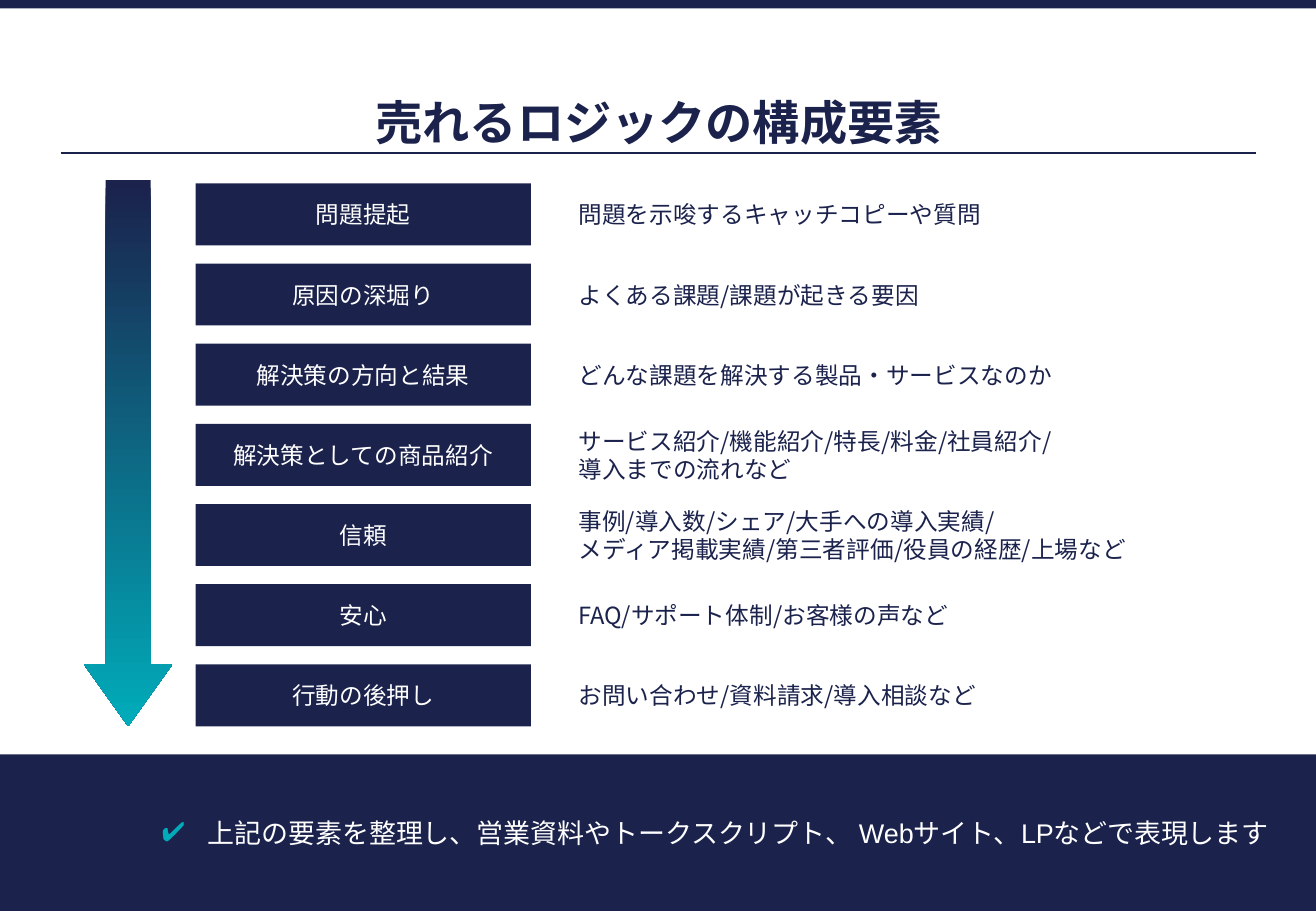
from lxml import etree
from pptx import Presentation
from pptx.dml.color import RGBColor
from pptx.enum.shapes import MSO_CONNECTOR, MSO_SHAPE
from pptx.enum.text import MSO_ANCHOR, MSO_AUTO_SIZE, PP_ALIGN
from pptx.oxml.ns import qn
from pptx.util import Inches, Pt

# Content
TITLE = "売れるロジックの構成要素"
STEPS = [
    ("問題提起", "問題を示唆するキャッチコピーや質問"),
    ("原因の深堀り", "よくある課題/課題が起きる要因"),
    ("解決策の方向と結果", "どんな課題を解決する製品・サービスなのか"),
    ("解決策としての商品紹介",
     "サービス紹介/機能紹介/特長/料金/社員紹介/\n導入までの流れなど"),
    ("信頼",
     "事例/導入数/シェア/大手への導入実績/\nメディア掲載実績/第三者評価/役員の経歴/上場など"),
    ("安心", "FAQ/サポート体制/お客様の声など"),
    ("行動の後押し", "お問い合わせ/資料請求/導入相談など"),
]
SUMMARY = "上記の要素を整理し、営業資料やトークスクリプト、 Webサイト、LPなどで表現します"

# Format
COLORS = {"navy": "1B224C", "teal": "00ACBA", "white": "FFFFFF"}
CJK = "Noto Sans CJK JP"
TITLE_FONT = {"size": Pt(28), "name": "Arial", "bold": True}
STEP_FONT = {"size": Pt(14), "name": CJK}
SUMMARY_FONT = {"size": Pt(16), "name": "Arial"}

# Layout in inches
WIDTH, HEIGHT = 10.83, 7.5
MARGIN, CONTENT_W = 0.5, 9.84
STEP_TOP, STEP_PITCH, STEP_H = 1.51, 0.66, 0.51
STEP_LEFT, STEP_W = 1.61, 2.76
DETAIL_LEFT, DETAIL_W, DETAIL_LINE_H = 4.76, 5.38, 0.24
SUMMARY_TOP = 6.21


def rgb(color):
    return RGBColor.from_string(COLORS[color])


def box(left, top, width, height):
    return [Inches(value) for value in (left, top, width, height)]


def write(shape, text, font, color, align, insets=(0, 0, 0, 0)):
    frame = shape.text_frame
    values = {"word_wrap": True, "auto_size": MSO_AUTO_SIZE.NONE,
              "vertical_anchor": MSO_ANCHOR.MIDDLE}
    sides = ("margin_left", "margin_top", "margin_right", "margin_bottom")
    values.update(zip(sides, map(Inches, insets)))
    for key, value in values.items():
        setattr(frame, key, value)
    paragraph = frame.paragraphs[0]
    paragraph.text = text
    paragraph.alignment = align
    for run in paragraph.runs:
        for key, value in font.items():
            setattr(run.font, key, value)
        run.font.color.rgb = rgb(color)
        east_asian = etree.SubElement(run.font._element, qn("a:ea"))
        east_asian.set("typeface", CJK)
    return paragraph


def add_block(slide, left, top, width, height, kind=MSO_SHAPE.RECTANGLE):
    block = slide.shapes.add_shape(kind, *box(left, top, width, height))
    block.shadow.inherit = False
    block.fill.solid()
    block.fill.fore_color.rgb = rgb("navy")
    block.line.fill.background()
    return block


def add_check_bullet(paragraph):
    properties = paragraph._p.get_or_add_pPr()
    properties.set("marL", str(Inches(0.38)))
    properties.set("indent", str(-Inches(0.38)))
    bullet_color = etree.SubElement(properties, qn("a:buClr"))
    etree.SubElement(bullet_color, qn("a:srgbClr")).set("val", COLORS["teal"])
    etree.SubElement(properties, qn("a:buFont")).set("typeface", "Arial")
    etree.SubElement(properties, qn("a:buChar")).set("char", "✔")


def main():
    deck = Presentation()
    deck.slide_width, deck.slide_height = Inches(WIDTH), Inches(HEIGHT)
    slide = deck.slides.add_slide(deck.slide_layouts[5])

    # Top band, title and rule
    add_block(slide, 0, 0, WIDTH, 0.07)
    title = slide.shapes.title
    title.left, title.top, title.width, title.height = box(
        MARGIN, 0.52, CONTENT_W, 0.73)
    heading = write(title, TITLE, TITLE_FONT, "navy", PP_ALIGN.CENTER)
    heading.line_spacing = 1.5
    rule = slide.shapes.add_connector(
        MSO_CONNECTOR.STRAIGHT, Inches(MARGIN), Inches(1.26),
        Inches(MARGIN + CONTENT_W), Inches(1.26))
    rule.line.color.rgb = rgb("navy")
    rule.line.width = Pt(1)
    etree.SubElement(rule._element.spPr, qn("a:effectLst"))

    # Summary band
    summary = add_block(slide, 0, SUMMARY_TOP, WIDTH, HEIGHT - SUMMARY_TOP)
    add_check_bullet(write(summary, SUMMARY, SUMMARY_FONT, "white",
                           PP_ALIGN.LEFT, (1.33, 0, 0.31, 0)))

    # Steps with their details
    for index, (step, detail) in enumerate(STEPS):
        top = STEP_TOP + index * STEP_PITCH
        label = add_block(slide, STEP_LEFT, top, STEP_W, STEP_H)
        write(label, step, STEP_FONT, "white", PP_ALIGN.CENTER, (0.08,) * 4)
        detail_h = DETAIL_LINE_H * len(detail.splitlines())
        description = slide.shapes.add_textbox(*box(
            DETAIL_LEFT, top + (STEP_H - detail_h) / 2, DETAIL_W, detail_h))
        write(description, detail, STEP_FONT, "navy", PP_ALIGN.LEFT)

    # Flow arrow
    flow = add_block(slide, 0.69, 1.48, 0.73, 4.5, MSO_SHAPE.DOWN_ARROW)
    flow.adjustments[0], flow.adjustments[1] = 0.51, 0.7
    flow.fill.gradient()
    flow.fill.gradient_angle = 270
    for stop, color in zip(flow.fill.gradient_stops, ("navy", "teal")):
        stop.color.rgb = rgb(color)

    deck.save("out.pptx")


if __name__ == "__main__":
    main()
